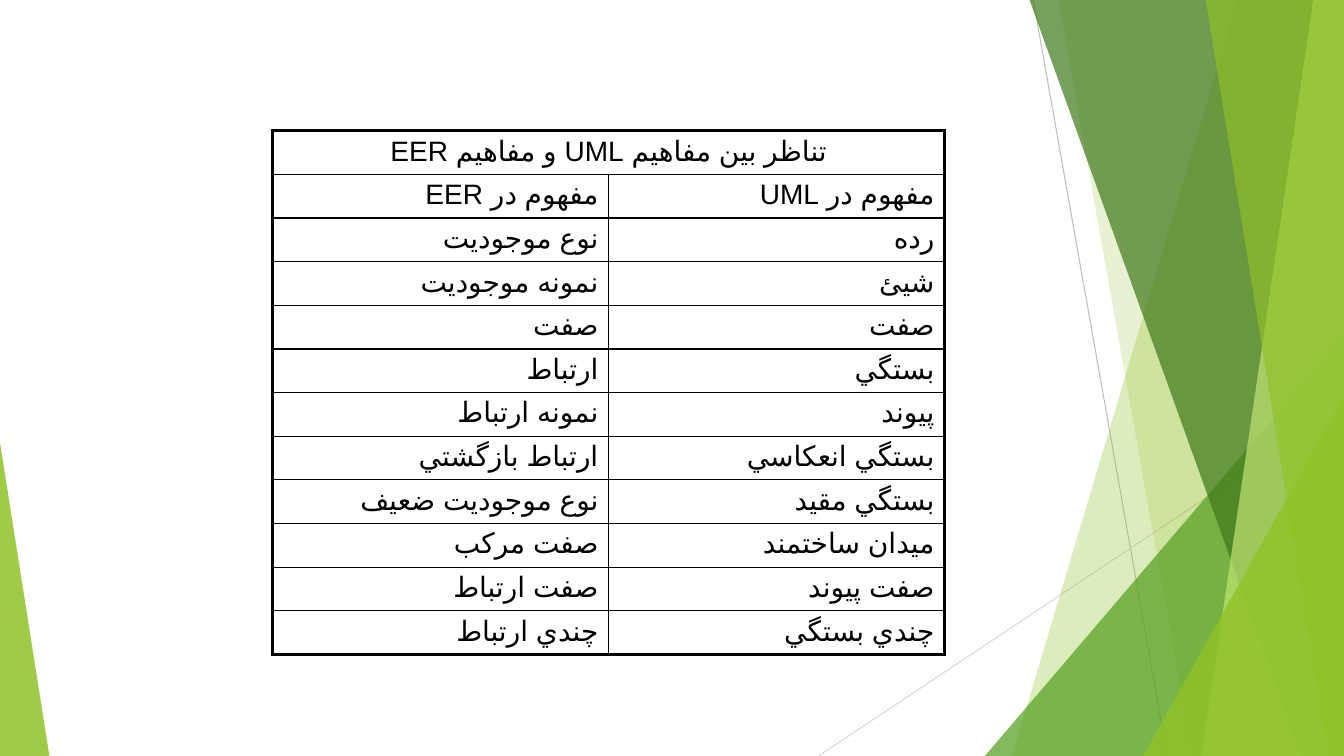
import pptx
import pptx.dml.color
import pptx.enum.lang
import pptx.enum.shapes
import pptx.enum.text
import pptx.oxml.ns
import pptx.util
import lxml.etree

# The slide is a grid of 100 columns by 100 rows
WIDTH, HEIGHT = pptx.util.Inches(13.333), pptx.util.Inches(7.5)
TOP = -0.13
LEAF, GRASS, FOREST, LIME = "90C226", "54A021", "3F7819", "C0E474"
BLACK = "000000"
THICK, THIN = 2.25, 1

HEADING = "تناظر بين مفاهيم UML و مفاهيم EER"
CONCEPTS = [
    ("مفهوم در EER", "مفهوم در UML"),
    ("نوع موجوديت", "رده"),
    ("نمونه موجوديت", "شيئ"),
    ("صفت", "صفت"),
    ("ارتباط", "بستگي"),
    ("نمونه ارتباط", "پيوند"),
    ("ارتباط بازگشتي", "بستگي انعكاسي"),
    ("نوع موجوديت ضعيف", "بستگي مقيد"),
    ("صفت مركب", "ميدان ساختمند"),
    ("صفت ارتباط", "صفت پيوند"),
    ("چندي ارتباط", "چندي بستگي"),
]


def across(column):
    return round(WIDTH * column / 100)


def down(row):
    return round(HEIGHT * row / 100)


def color(value):
    return pptx.dml.color.RGBColor.from_string(value)


def add_child(parent, tag, **attributes):
    return lxml.etree.SubElement(parent, pptx.oxml.ns.qn(tag), attributes)


def paint(shape, value, opacity):
    shape.shadow.inherit = False
    shape.line.fill.background()
    shape.fill.solid()
    shape.fill.fore_color.rgb = color(value)
    fill = shape.element.spPr.find(pptx.oxml.ns.qn("a:solidFill"))
    add_child(fill[0], "a:alpha", val=str(opacity * 1000))


def add_line(page, start, end, value):
    line = page.shapes.add_connector(
        pptx.enum.shapes.MSO_CONNECTOR.STRAIGHT,
        across(start[0]), down(start[1]), across(end[0]), down(end[1]))
    line.line.color.rgb = color(value)
    line.line.width = pptx.util.Pt(0.75)
    add_child(line.element.spPr, "a:effectLst")


def add_band(page, upper, lower, value, opacity):
    """A full-height band between a slanted left side and the right edge."""
    builder = page.shapes.build_freeform(across(upper), down(TOP), scale=1.0)
    corners = [(100, TOP), (100, 100), (lower, 100)]
    builder.add_line_segments([(across(x), down(y)) for x, y in corners], close=True)
    paint(builder.convert_to_shape(), value, opacity)


def add_triangle(page, left, top, width, apex, value, opacity):
    """A triangle standing on the bottom edge of the slide."""
    triangle = page.shapes.add_shape(
        pptx.enum.shapes.MSO_SHAPE.ISOSCELES_TRIANGLE,
        across(left), down(top), across(width), down(100 - top))
    triangle.adjustments[0] = apex
    paint(triangle, value, opacity)


def set_borders(cell, **widths):
    properties = cell._tc.get_or_add_tcPr()
    for position, (side, points) in enumerate(widths.items()):
        edge = lxml.etree.Element(pptx.oxml.ns.qn("a:ln" + side),
                                  w=str(pptx.util.Pt(points)))
        add_child(add_child(edge, "a:solidFill"), "a:srgbClr", val=BLACK)
        properties.insert(position, edge)


def write_cell(cell, text, alignment):
    cell.text_frame.text = text
    para = cell.text_frame.paragraphs[0]
    para.alignment = alignment
    settings = para._p.get_or_add_pPr()
    settings.set("rtl", "1")
    add_child(add_child(settings, "a:spcBef"), "a:spcPct", val="20000")
    for span in para.runs:
        span.font.size = pptx.util.Pt(20)
        span.font.name = "Arial"
        span.font.language_id = pptx.enum.lang.MSO_LANGUAGE_ID.FARSI
        span.font.color.rgb = color(BLACK)
        add_child(span.font._element, "a:cs", typeface="Arial")


def add_concept_table(page, left, top, width, height):
    count = len(CONCEPTS) + 1
    table = page.shapes.add_table(count, 2, across(left), down(top),
                                  across(width), down(height)).table
    table.first_row = table.horz_banding = False
    for row in table.rows:
        row.height = down(height / count)

    # Heading across both columns
    align = pptx.enum.text.PP_ALIGN
    table.cell(0, 0).merge(table.cell(0, 1))
    write_cell(table.cell(0, 0), HEADING, align.CENTER)
    for number, pair in enumerate(CONCEPTS, start=1):
        for column, text in enumerate(pair):
            write_cell(table.cell(number, column), text, align.RIGHT)

    # Thick outer frame, thin inner rules
    for number in range(count):
        for column in range(2):
            cell = table.cell(number, column)
            cell.fill.background()
            set_borders(cell,
                        L=THICK if column == 0 else THIN,
                        R=THICK if column == 1 or number == 0 else THIN,
                        T=THICK if number == 0 else THIN,
                        B=THICK if number == count - 1 else THIN)


def main():
    deck = pptx.Presentation()
    deck.slide_width, deck.slide_height = WIDTH, HEIGHT
    page = deck.slides.add_slide(deck.slide_layouts[6])

    # Decoration, from back to front
    add_line(page, (76.88, 0), (86.85, 100), "BFBFBF")
    add_line(page, (100, 53.73), (60.9, 100), "D9D9D9")
    add_band(page, 92.1, 75.3, LEAF, 30)
    add_band(page, 78.75, 88.73, LEAF, 20)
    add_triangle(page, 73.28, 44.4, 26.72, 1, GRASS, 72)
    add_band(page, 76.58, 96.83, FOREST, 70)
    add_band(page, 97.73, 89.4, LIME, 70)
    add_band(page, 89.7, 98.85, LEAF, 65)
    add_triangle(page, 85.05, 52.4, 14.95, 1, LEAF, 80)
    add_triangle(page, 0, 58.53, 3.68, 0, LEAF, 85)

    # Matching concepts
    add_concept_table(page, 20.28, 17.28, 50, 69.33)

    deck.save("out.pptx")


if __name__ == "__main__":
    main()
